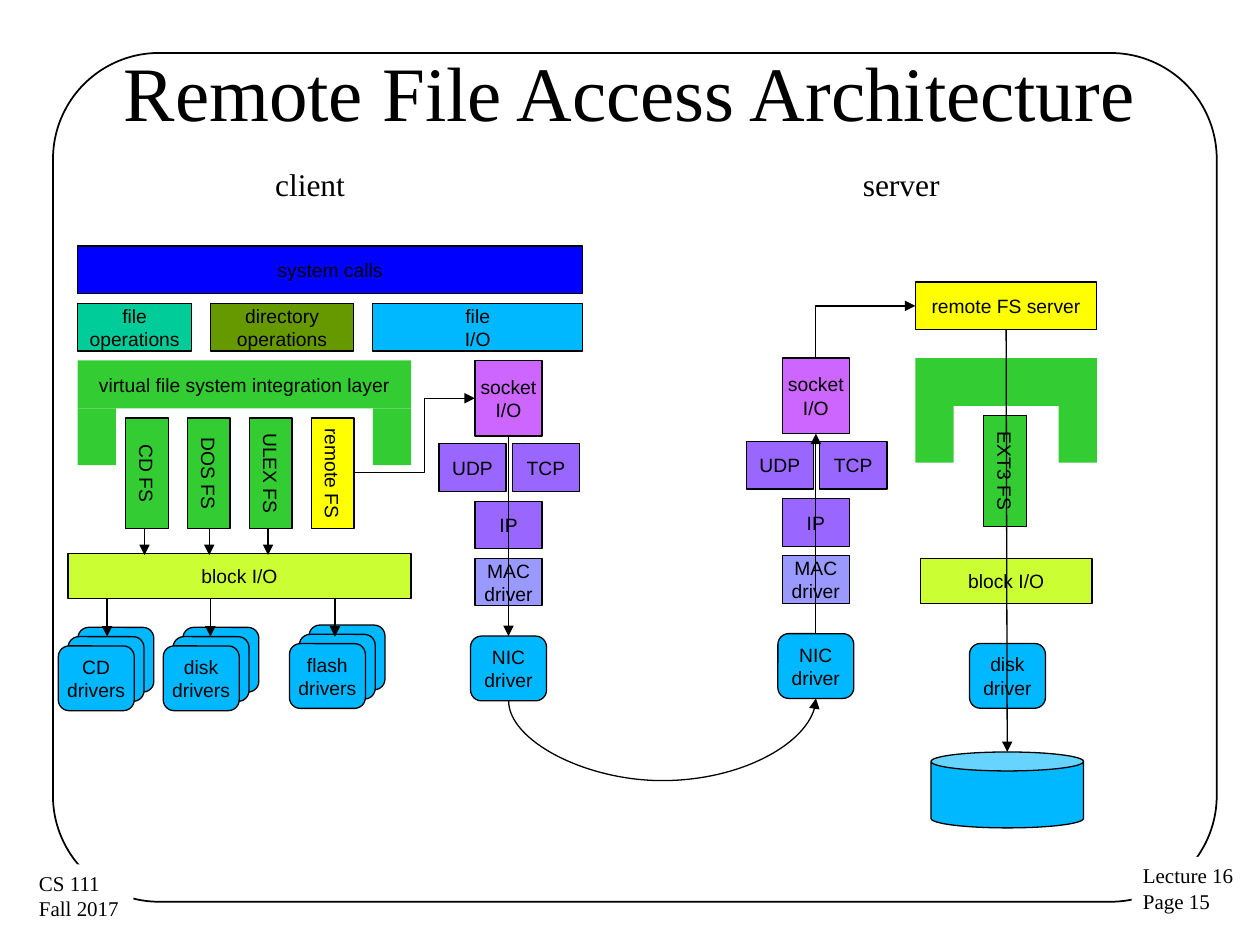
from dataclasses import dataclass

from lxml import etree
from pptx import Presentation
from pptx.dml.color import RGBColor
from pptx.enum import shapes, text
from pptx.oxml.ns import qn
from pptx.util import Pt

RECT = shapes.MSO_SHAPE.RECTANGLE
ROUND = shapes.MSO_SHAPE.ROUNDED_RECTANGLE
CAN = shapes.MSO_SHAPE.CAN
LINE = shapes.MSO_CONNECTOR
CENTER, LEFT = text.PP_ALIGN.CENTER, text.PP_ALIGN.LEFT
TOP, BOTTOM = 0, 2


@dataclass(frozen=True)
class Theme:
    ink: str = "000000"
    paper: str = "FFFFFF"
    calls: str = "0000FF"
    files: str = "00CC99"
    folders: str = "669900"
    device: str = "00B8FF"
    fs: str = "33CC33"
    remote: str = "FFFF00"
    block: str = "CCFF33"
    socket: str = "CC66FF"
    protocol: str = "9966FF"
    mac: str = "9999FF"
    serif: str = "Times New Roman"
    sans: str = "Arial"
    title: int = 44
    heading: int = 18
    footer: int = 12
    body: int = 11
    thin: float = 0.75
    frame: float = 1


T = Theme()


def rgb(value):
    return RGBColor.from_string(value)


def write(sp, lines, size, font, align=CENTER, anchor=text.MSO_ANCHOR.MIDDLE, wrap=False):
    """Put each line in its own paragraph."""
    tf = sp.text_frame
    tf.word_wrap = wrap
    tf.vertical_anchor = anchor
    tf.margin_left = tf.margin_right = Pt(6.5)
    tf.margin_top = tf.margin_bottom = Pt(3.6)
    for i, line in enumerate(lines):
        p = tf.paragraphs[0] if i == 0 else tf.add_paragraph()
        p.alignment = align
        r = p.add_run()
        r.text = line
        r.font.size = Pt(size)
        r.font.name = font
        r.font.color.rgb = rgb(T.ink)


def block(s, x, y, w, h, fill, *lines, kind=RECT, outline=T.thin, turn=0):
    sp = s.shapes.add_shape(kind, Pt(x), Pt(y), Pt(w), Pt(h))
    sp.shadow.inherit = False
    sp.rotation = turn
    if fill:
        sp.fill.solid()
        sp.fill.fore_color.rgb = rgb(fill)
    else:
        sp.fill.background()
    if outline:
        sp.line.color.rgb = rgb(T.ink)
        sp.line.width = Pt(outline)
    else:
        sp.line.fill.background()
    if lines:
        write(sp, lines, T.body, T.sans)
    return sp


def label(s, x, y, w, h, line, size, anchor=text.MSO_ANCHOR.TOP):
    sp = s.shapes.add_textbox(Pt(x), Pt(y), Pt(w), Pt(h))
    write(sp, [line], size, T.serif, anchor=anchor, wrap=True)


def arrow(s, x1, y1, x2, y2, kind=LINE.STRAIGHT):
    c = s.shapes.add_connector(kind, Pt(x1), Pt(y1), Pt(x2), Pt(y2))
    c.line.color.rgb = rgb(T.ink)
    c.line.width = Pt(T.thin)
    etree.SubElement(c.line._get_or_add_ln(), qn("a:tailEnd"), type="triangle")
    etree.SubElement(c._element.spPr, qn("a:effectLst"))
    return c


def shape_route(c, preset=None, adjust=None, turn=0, flips=()):
    """Set the preset, bend, rotation and flips of a bent or curved connector."""
    geom = c._element.spPr.find(qn("a:prstGeom"))
    xfrm = c._element.spPr.find(qn("a:xfrm"))
    if preset:
        geom.set("prst", preset)
    if adjust is not None:
        av = geom.find(qn("a:avLst"))
        etree.SubElement(av, qn("a:gd"), name="adj1", fmla=f"val {round(adjust * 100000)}")
    if turn:
        xfrm.set("rot", str(turn * 60000))
    for flip in flips:
        xfrm.set(flip, "1")


def turned_arrow(s, x1, y1, x2, y2, kind, turn, **route):
    """Connector whose box is given a quarter turn about its centre."""
    cx, cy = (x1 + x2) / 2, (y1 + y2) / 2
    w, h = abs(y2 - y1), abs(x2 - x1)
    c = arrow(s, cx - w / 2, cy - h / 2, cx + w / 2, cy + h / 2, kind)
    shape_route(c, turn=turn, **route)


def file_system(s, x, y, name, fill=T.fs):
    """Upright box, 24.5 by 63.4, with its text turned."""
    w, h = 63.4, 24.5
    block(s, x + (h - w) / 2, y + (w - h) / 2, w, h, fill, name, turn=90)


def bridge(s, x, y, w, *lines):
    """Integration layer with a leg at each end."""
    leg = 21.9
    block(s, x, y, w, 27.4, T.fs, *lines, outline=0)
    for lx in (x, x + w - leg):
        block(s, lx, y + 27.4, leg, 32.4, T.fs, outline=0)


def driver(s, x, y, *lines):
    return block(s, x, y, 43.4, 37, T.device, *lines, kind=ROUND)


def driver_stack(s, x, y, name):
    for i in (2, 1):
        driver(s, x + 5.6 * i, y - 5.3 * i)
    driver(s, x, y, name, "drivers")


def protocol_stack(s, x, y, upward):
    """Socket to network card, with its top left at the socket box."""
    w, h = 38.4, 27.2
    socket = block(s, x, y, w, 43.2, T.socket, "socket", "I/O")
    for dx, dy, fill, lines in (
        (-20.6, 47.6, T.protocol, ["UDP"]),
        (21.4, 47.6, T.protocol, ["TCP"]),
        (0, 80.4, T.protocol, ["IP"]),
        (0, 113, T.mac, ["MAC", "driver"]),
    ):
        block(s, x + dx, y + dy, w, h, fill, *lines)
    nic = driver(s, x - 2.5, y + 157.5, "NIC", "driver")
    c = arrow(s, x, y, x, y)
    ends = [(socket, BOTTOM), (nic, TOP)]
    if upward:
        ends.reverse()
    c.begin_connect(*ends[0])
    c.end_connect(*ends[1])


def page_frame(s, x, y, w, h):
    frame = block(s, x, y, w, h, None, kind=ROUND, outline=T.frame)
    frame.adjustments[0] = 0.125
    for fx, fy, fw, lines in ((646.6, 489.6, 67, ["Lecture 16", "Page 15"]),
                              (15.8, 494, 60.5, ["CS 111", "Fall 2017"])):
        sp = block(s, fx, fy, fw, 36.7, T.paper, outline=0)
        write(sp, lines, T.footer, T.serif, LEFT, text.MSO_ANCHOR.TOP)


def client(s, x, y):
    label(s, x + 64.8, y - 49.7, 136, 28, "client", T.heading)
    block(s, x, y, 288.6, 27.2, T.calls, "system calls")
    for dx, w, fill, lines in ((0, 65.2, T.files, ("file", "operations")),
                               (76, 81.6, T.folders, ("directory", "operations")),
                               (168.6, 120, T.device, ("file", "I/O"))):
        block(s, x + dx, y + 32.8, w, 27.2, fill, *lines)
    bridge(s, x, y + 65.4, 190.6, "virtual file system integration layer")
    for i, name in enumerate(("CD FS", "DOS FS", "ULEX FS", "remote FS")):
        file_system(s, x + 27.2 + 35.4 * i, y + 98.2, name,
                    T.remote if name == "remote FS" else T.fs)
    block(s, x - 5.5, y + 175.8, 196, 25.8, T.block, "block I/O")
    for dx in (38.2, 75.2, 108.8):
        arrow(s, x + dx, y + 161, x + dx, y + 176.6)
    for dx, dy, name in ((-11.1, 228.5, "CD"), (48.9, 228.5, "disk"), (121, 227.2, "flash")):
        driver_stack(s, x + dx, y + dy, name)
    for dx in (16.8, 75.8, 147):
        arrow(s, x + dx, y + 201.6, x + dx, y + 223.2)
    protocol_stack(s, x + 227, y + 65.4, upward=False)
    c = arrow(s, x + 158, y + 129.6, x + 227, y + 87, LINE.ELBOW)
    shape_route(c, adjust=0.584)


def server(s, x, y):
    label(s, x, y - 70.4, 136, 28, "server", T.heading)
    protocol_stack(s, x, y + 43.4, upward=True)
    bridge(s, x + 76.1, y + 43.4, 103.7)
    file_system(s, x + 115, y + 76.1, "EXT3 FS")
    block(s, x + 79, y + 157.9, 98, 25.6, T.block, "block I/O")
    driver(s, x + 107, y + 206.5, "disk", "driver")
    block(s, x + 85, y + 268.5, 87.2, 43.4, T.device, kind=CAN)
    fs_server = block(s, x + 76.1, y, 103.7, 27.2, T.remote, "remote FS server")
    turned_arrow(s, x + 19.2, y + 43.4, x + 76.1, y + 13.6, LINE.ELBOW, 270,
                 preset="bentConnector2")
    c = arrow(s, x + 128, y + 27.2, x + 128.6, y + 268.5)
    c.begin_connect(fs_server, BOTTOM)


def main():
    prs = Presentation()
    prs.slide_width, prs.slide_height = Pt(720), Pt(540)
    s = prs.slides.add_slide(prs.slide_layouts[6])
    page_frame(s, 30.3, 30.3, 665, 485)
    label(s, 28, 21.6, 664, 60, "Remote File Access Architecture", T.title,
          text.MSO_ANCHOR.MIDDLE)
    client(s, 44.4, 140.6)
    server(s, 447, 161.2)
    sag = 46
    turned_arrow(s, 290.6, 400.5, 466.2, 399.1, LINE.CURVE, 90,
                 adjust=-sag / 1.4, flips=("flipH", "flipV"))
    prs.save("out.pptx")


if __name__ == "__main__":
    main()
